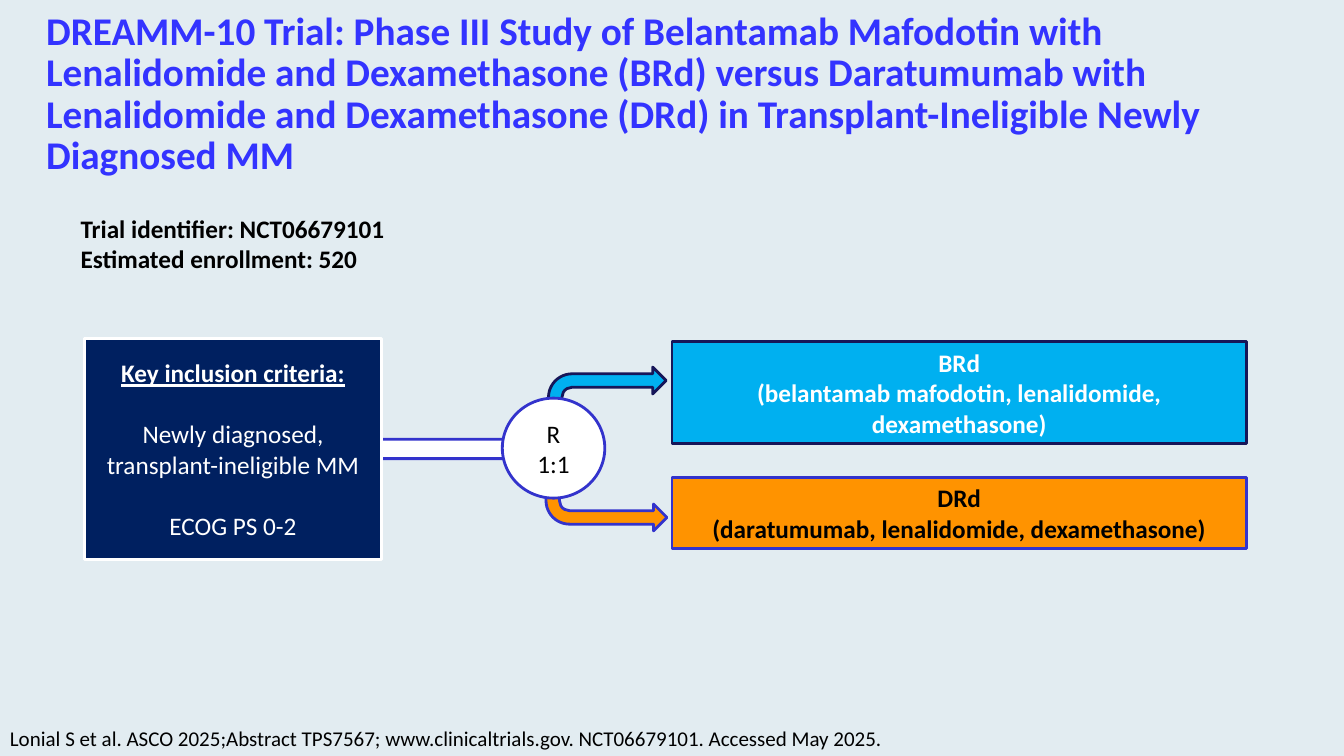
from pptx import Presentation
from pptx import util as u
from pptx.dml.color import RGBColor
from pptx.enum import shapes, text

COLORS = {
    "background": "E2ECF1", "title": "3333FF", "outline": "3333CC",
    "dark": "161659", "navy": "002060", "blue": "00B0F0",
    "orange": "FF9300", "white": "FFFFFF", "black": "000000",
}
SHAPE = shapes.MSO_SHAPE
MIDDLE, TOP = text.MSO_ANCHOR.MIDDLE, text.MSO_ANCHOR.TOP
CENTER = text.PP_ALIGN.CENTER


def color(name):
    return RGBColor.from_string(COLORS[name])


def write(p, words, size=18, ink="black", bold=False, underline=False,
          align=None, before=0, spacing=None):
    """Put one formatted run into a paragraph."""
    if align is not None:
        p.alignment = align
    if before:
        p.space_before = u.Pt(before)
    if spacing:
        p.line_spacing = spacing
    r = p.add_run()
    r.text = words
    r.font.name = "Calibri"
    r.font.size = u.Pt(size)
    r.font.bold = bold
    r.font.underline = underline
    r.font.color.rgb = color(ink)


class TrialSlide:
    """A slide laid out on a grid of 160 columns by 90 rows."""
    COLS, ROWS = 160, 90

    def __init__(self, prs):
        self.cell_w = prs.slide_width / self.COLS
        self.cell_h = prs.slide_height / self.ROWS
        self.s = prs.slides.add_slide(prs.slide_layouts[6])
        self.s.background.fill.solid()
        self.s.background.fill.fore_color.rgb = color("background")

    def place(self, col, row, cols, rows):
        return (round(col * self.cell_w), round(row * self.cell_h),
                round(cols * self.cell_w), round(rows * self.cell_h))

    def fill_text(self, tf, lines, **style):
        for i, line in enumerate(lines):
            words, extra = line if isinstance(line, tuple) else (line, {})
            p = tf.paragraphs[0] if i == 0 else tf.add_paragraph()
            write(p, words, **{**style, **extra})

    def label(self, area, lines, anchor=TOP, inset=True, wrap=True, **style):
        tf = self.s.shapes.add_textbox(*self.place(*area)).text_frame
        tf.word_wrap = wrap
        tf.vertical_anchor = anchor
        if not inset:
            tf.margin_left = tf.margin_right = tf.margin_top = tf.margin_bottom = 0
        self.fill_text(tf, lines, **style)

    def shape(self, kind, area, fill, line="outline", lines=(), **style):
        sp = self.s.shapes.add_shape(kind, *self.place(*area))
        sp.shadow.inherit = False
        sp.fill.solid()
        sp.fill.fore_color.rgb = color(fill)
        sp.line.color.rgb = color(line)
        sp.line.width = u.Pt(2)
        sp.text_frame.word_wrap = True
        sp.text_frame.vertical_anchor = MIDDLE
        self.fill_text(sp.text_frame, lines, align=CENTER, **style)
        return sp

    def box(self, area, fill, line, lines, **style):
        sp = self.shape(SHAPE.ROUNDED_RECTANGLE, area, fill, line, lines, **style)
        sp.adjustments[0] = 0

    def bent_arrow(self, area, fill, line, down=False):
        sp = self.shape(SHAPE.BENT_ARROW, area, fill, line)
        if down:
            sp.element.spPr.xfrm.set("flipV", "1")


def main():
    prs = Presentation()
    prs.slide_width, prs.slide_height = u.Inches(13.33), u.Inches(7.5)
    slide = TrialSlide(prs)

    # Title and trial facts
    slide.label((5.5, 7, 149, 8.6), [
        "DREAMM-10 Trial: Phase III Study of Belantamab Mafodotin with "
        "Lenalidomide and Dexamethasone (BRd) versus Daratumumab with "
        "Lenalidomide and Dexamethasone (DRd) in Transplant-Ineligible "
        "Newly Diagnosed MM"],
        anchor=MIDDLE, inset=False, size=28, ink="title", bold=True, spacing=0.88)
    slide.label((8.4, 24.8, 39, 8.5),
                ["Trial identifier: NCT06679101", "Estimated enrollment: 520"],
                wrap=False, bold=True)

    # Paths into and out of randomization
    slide.bent_arrow((65, 56.8, 14.4, 6.4), "orange", "outline", down=True)
    slide.shape(SHAPE.PENTAGON, (43.3, 52.3, 19.8, 2.3), "white")
    slide.bent_arrow((65.3, 43.7, 14, 6.4), "blue", "dark")

    # Inclusion criteria
    slide.box((10.1, 40.3, 35.3, 26.3), "navy", "white", [
        ("Key inclusion criteria:", {"bold": True, "underline": True}),
        ("Newly diagnosed, transplant-ineligible MM", {"before": 22}),
        ("ECOG PS 0-2", {"before": 22})], ink="white")

    # Randomization
    slide.shape(SHAPE.OVAL, (59.8, 47.4, 12.2, 11.9), "white", lines=["R", "1:1"])

    # Treatment arms
    slide.box((80, 40.7, 68.4, 12.1), "blue", "dark",
              ["BRd", "(belantamab mafodotin, lenalidomide, dexamethasone)"],
              ink="white", bold=True)
    slide.box((80, 56.8, 68.4, 8.5), "orange", "outline",
              ["DRd", "(daratumumab, lenalidomide, dexamethasone)"], bold=True)

    # Citation
    slide.label((0, 85.8, 134.4, 4.2), [
        "Lonial S et al. ASCO 2025;Abstract TPS7567; www.clinicaltrials.gov. "
        "NCT06679101. Accessed May 2025."], size=15)

    prs.save("out.pptx")


if __name__ == "__main__":
    main()
